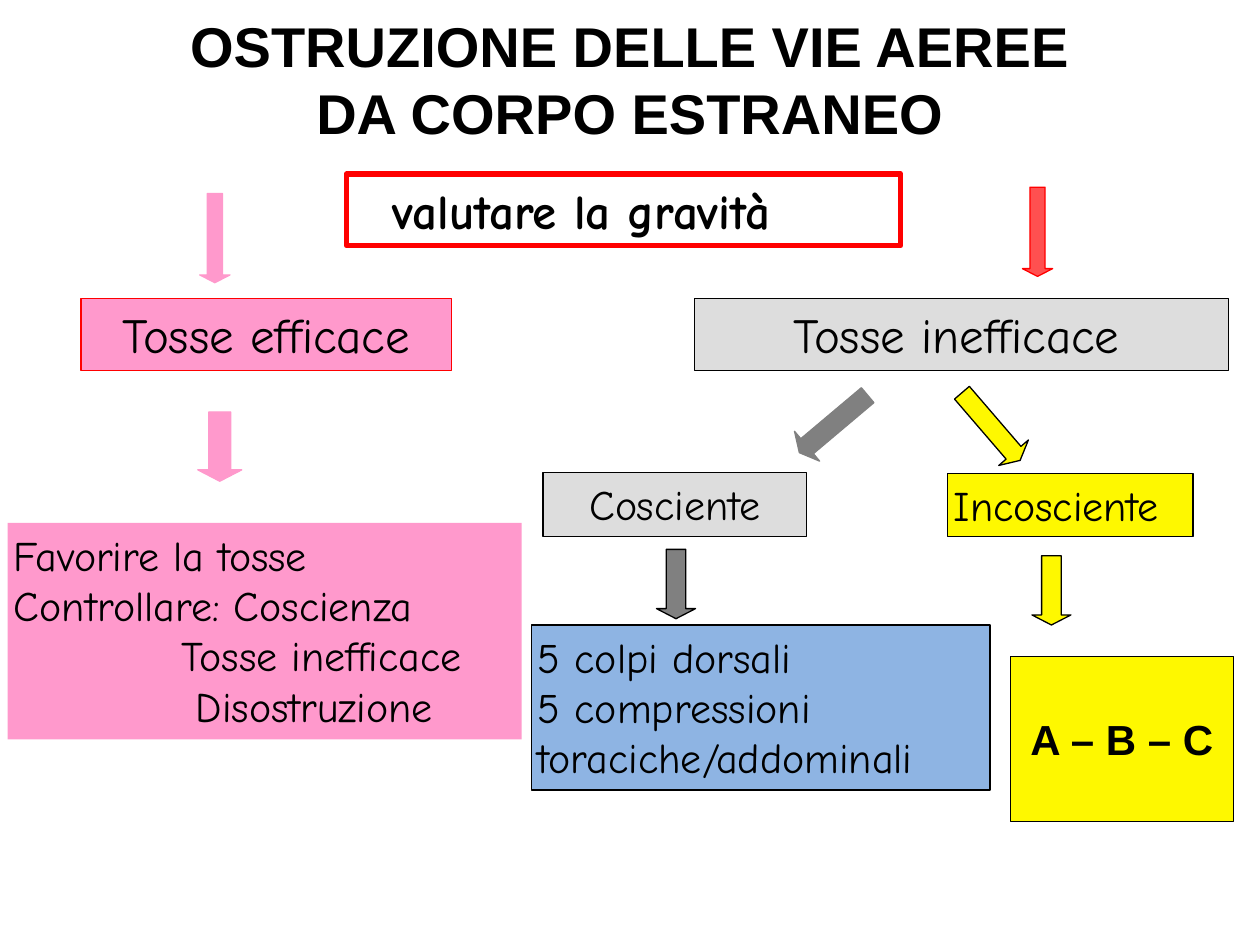
from pptx import Presentation
from pptx.dml.color import RGBColor
from pptx.enum.shapes import MSO_SHAPE
from pptx.enum.text import MSO_ANCHOR, PP_ALIGN
from pptx.util import Pt

BLACK = RGBColor(0, 0, 0)
RED = RGBColor(0xFF, 0, 0)
CORAL = RGBColor(0xFF, 0x50, 0x50)
PINK = RGBColor(0xFF, 0x99, 0xCC)
LIGHT_GREY = RGBColor(0xDD, 0xDD, 0xDD)
GREY = RGBColor(0x80, 0x80, 0x80)
YELLOW = RGBColor(0xFE, 0xF8, 0)
BLUE = RGBColor(0x8E, 0xB4, 0xE3)
HEADING_FONT = "Arial"
BODY_FONT = "Comic Neue"
INSET = 3.6


def paint(shape, fill, line, width=0.75):
    """Set the fill and outline of a shape; None leaves that part empty."""
    shape.shadow.inherit = False
    for part, color in ((shape.fill, fill), (shape.line.fill, line)):
        if color is None:
            part.background()
        else:
            part.solid()
            part.fore_color.rgb = color
    if line is not None:
        shape.line.width = Pt(width)


def set_frame(frame, anchor):
    """Give a text frame its margins, wrapping and anchor."""
    frame.margin_left = frame.margin_right = Pt(INSET)
    frame.margin_top = frame.margin_bottom = Pt(INSET)
    frame.word_wrap = True
    frame.vertical_anchor = anchor


def add_span(para, text, size, font=BODY_FONT, bold=False):
    """Add one formatted run to a paragraph."""
    span = para.add_run()
    span.text = text
    span.font.size = Pt(size)
    span.font.name = font
    span.font.bold = bold
    span.font.color.rgb = BLACK


def add_box(page, box, lines, size, fill, line=BLACK, width=0.75,
            align=PP_ALIGN.LEFT, anchor=MSO_ANCHOR.TOP, font=BODY_FONT, bold=False):
    """Draw a rectangle holding lines given as (text, indent) pairs."""
    shape = page.shapes.add_shape(MSO_SHAPE.RECTANGLE, *map(Pt, box))
    paint(shape, fill, line, width)
    frame = shape.text_frame
    set_frame(frame, anchor)
    for index, (text, indent) in enumerate(lines):
        para = frame.add_paragraph() if index else frame.paragraphs[0]
        para.alignment = align
        if indent:
            para._p.get_or_add_pPr().set("marL", str(Pt(indent)))
        add_span(para, text, size, font, bold)


def add_arrow(page, box, fill, line, rotation=270):
    """Draw a block arrow, pointing down unless another rotation is given."""
    shape = page.shapes.add_shape(MSO_SHAPE.LEFT_ARROW, *map(Pt, box))
    shape.adjustments[0] = 0.5
    shape.adjustments[1] = 0.259
    shape.rotation = rotation
    paint(shape, fill, line)


def add_title(page, box):
    """Place and format the slide title."""
    title = page.shapes.title
    title.left, title.top, title.width, title.height = map(Pt, box)
    set_frame(title.text_frame, MSO_ANCHOR.MIDDLE)
    para = title.text_frame.paragraphs[0]
    para.alignment = PP_ALIGN.CENTER
    add_span(para, "OSTRUZIONE DELLE VIE AEREE DA CORPO ESTRANEO", 32, HEADING_FONT, True)


def add_effective_branch(page, box):
    """Draw the effective cough branch inside the given box."""
    left, top, width, height = box
    add_arrow(page, (left + 93, top, 51, 17.3), PINK, PINK)
    add_box(page, (left + 42, top + 43.2, 211.7, 41), [("Tosse efficace", 0)], 28,
            PINK, RED, align=PP_ALIGN.CENTER)
    add_arrow(page, (left + 101.5, top + 115.2, 39.6, 25.2), PINK, PINK)
    advice = [("Favorire la tosse", 0), ("Controllare: Coscienza", 0),
              ("Tosse inefficace", 96), ("Disostruzione", 104)]
    add_box(page, (left, top + height - 123.8, width, 123.8), advice, 24, PINK, None)


def add_ineffective_branch(page, box):
    """Draw the ineffective cough branch inside the given box."""
    left, top, width, height = box
    add_arrow(page, (left + 263.6, top, 51, 17.3), CORAL, RED)
    add_box(page, (left + 93, top + 46.8, 305.3, 41), [("Tosse inefficace", 53)], 28, LIGHT_GREY)
    add_arrow(page, (left + 147, top + 107.3, 51, 22.3), GREY, GREY, 319.9)
    add_arrow(page, (left + 237, top + 108.8, 51, 22.3), YELLOW, BLACK, 229.3)
    add_box(page, (left + 6.5, top + 146.2, 150.5, 36.7), [("Cosciente", 0)], 24,
            LIGHT_GREY, align=PP_ALIGN.CENTER)
    add_box(page, (left + 237.6, top + 146.9, 140.4, 36), [("Incosciente", 0)], 24, YELLOW)
    add_arrow(page, (left + 62.7, top + 198.8, 39.6, 22.3), GREY, BLACK)
    add_arrow(page, (left + 277.2, top + 202.4, 39.6, 22.3), YELLOW, BLACK)
    maneuvers = [("5 colpi dorsali", 0), ("5 compressioni toraciche/addominali", 0)]
    add_box(page, (left, top + 233.3, 262.1, 94.3), maneuvers, 24, BLUE, width=1)
    add_box(page, (left + width - 127.4, top + height - 94.3, 127.4, 94.3),
            [("A – B – C", 0)], 24, YELLOW, align=PP_ALIGN.CENTER,
            anchor=MSO_ANCHOR.MIDDLE, font=HEADING_FONT, bold=True)


def main():
    """Build and save the slide."""
    deck = Presentation()
    deck.slide_width, deck.slide_height = Pt(720), Pt(540)
    page = deck.slides.add_slide(deck.slide_layouts[5])
    add_title(page, (87.8, 2.2, 544.3, 85))
    add_box(page, (198, 99.4, 316.8, 41), [("valutare la gravità", 23)], 28,
            None, RED, 3, bold=True)
    add_effective_branch(page, (4.3, 127.4, 293.8, 295.2))
    add_ineffective_branch(page, (303.8, 123.8, 401, 345.6))
    deck.save("out.pptx")


if __name__ == "__main__":
    main()
